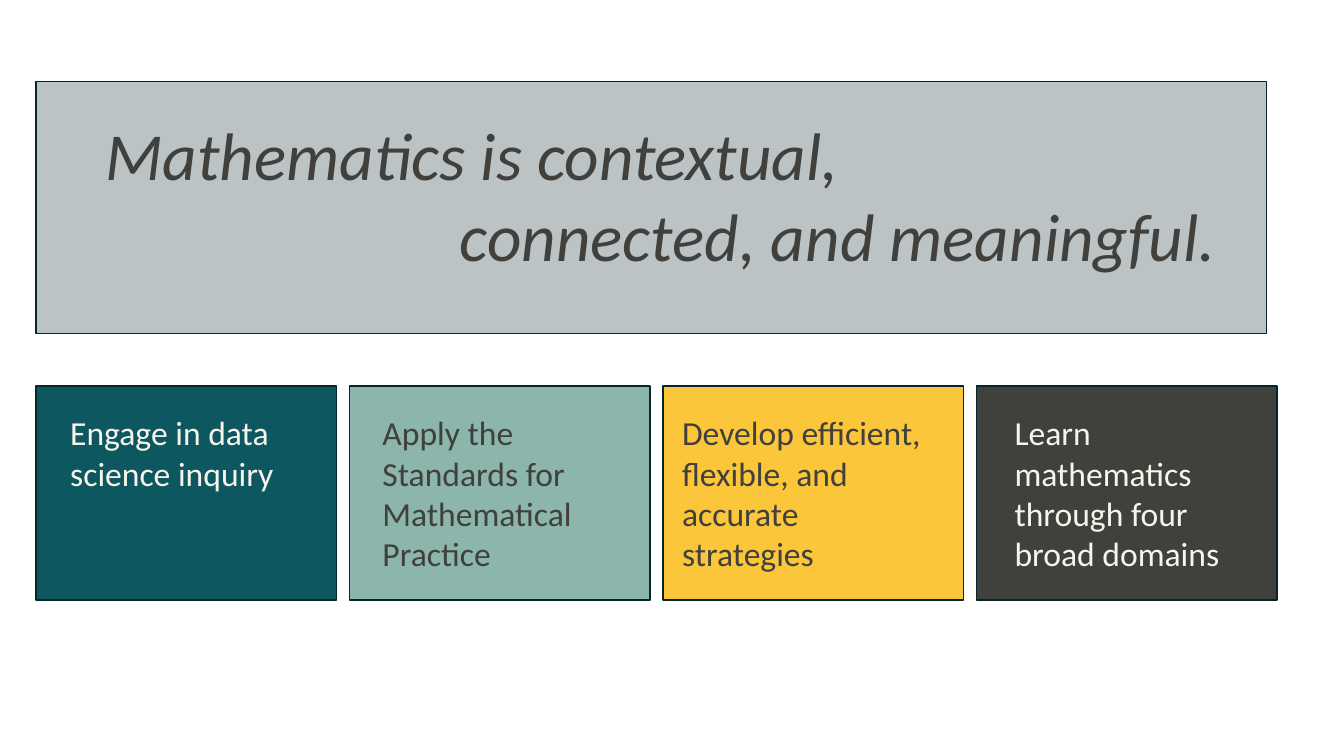
from dataclasses import dataclass

from pptx import Presentation
from pptx.dml.color import RGBColor
from pptx.enum.shapes import MSO_SHAPE
from pptx.enum.text import MSO_ANCHOR
from pptx.slide import Slide
from pptx.util import Cm, Pt

COLOURS = {
    "outline": "06262B",
    "grey": "BCC3C5",
    "teal": "0D5761",
    "sage": "8CB5AB",
    "yellow": "FBC639",
    "charcoal": "40403D",
    "cream": "F7F5EB",
}
FONT = "Calibri"
MARGIN_LEFT = 0.91
CARD_TOP, CARD_WIDTH, CARD_HEIGHT, CARD_PITCH = 9.73, 7.57, 5.39, 7.9
CARD_TEXT_TOP = 10.26


@dataclass
class Line:
    text: str
    indent: float = 0


@dataclass
class Card:
    message: str
    fill: str
    ink: str
    text_inset: float
    text_width: float
    text_height: float = 4.37


HEADLINE = [
    Line("Mathematics is contextual,"),
    Line("connected, and meaningful.", indent=8.93),
]
CARDS = [
    Card("Engage in data science inquiry", "teal", "cream", 0.61, 6.58, 2.34),
    Card("Apply the Standards for Mathematical Practice", "sage", "charcoal", 0.58, 7.06),
    Card("Develop efficient, flexible, and accurate strategies", "yellow", "charcoal", 0.23, 6.86),
    Card("Learn mathematics through four broad domains", "charcoal", "cream", 0.71, 6.58),
]


def colour(name: str) -> RGBColor:
    return RGBColor.from_string(COLOURS[name])


def add_panel(slide: Slide, left: float, top: float, width: float, height: float, fill: str) -> None:
    panel = slide.shapes.add_shape(MSO_SHAPE.RECTANGLE, Cm(left), Cm(top), Cm(width), Cm(height))
    panel.shadow.inherit = False
    panel.fill.solid()
    panel.fill.fore_color.rgb = colour(fill)
    panel.line.color.rgb = colour("outline")
    panel.line.width = Pt(1)


def add_text(slide: Slide, left: float, top: float, width: float, height: float,
             lines: list[Line], size: int, ink: str, italic: bool = False) -> None:
    frame = slide.shapes.add_textbox(Cm(left), Cm(top), Cm(width), Cm(height)).text_frame
    frame.word_wrap = True
    frame.vertical_anchor = MSO_ANCHOR.TOP
    for index, line in enumerate(lines):
        paragraph = frame.add_paragraph() if index else frame.paragraphs[0]
        if line.indent:
            paragraph._p.get_or_add_pPr().set("marL", str(Cm(line.indent)))
        run = paragraph.add_run()
        run.text = line.text
        run.font.name = FONT
        run.font.size = Pt(size)
        run.font.italic = italic
        run.font.color.rgb = colour(ink)


def main() -> None:
    presentation = Presentation()
    presentation.slide_width = Cm(33.87)
    presentation.slide_height = Cm(19.05)
    slide = presentation.slides.add_slide(presentation.slide_layouts[6])

    add_panel(slide, MARGIN_LEFT, 2.06, 31.01, 6.35, "grey")
    add_text(slide, 2.41, 2.74, 29.74, 4.37, HEADLINE, 48, "charcoal", italic=True)

    for column, card in enumerate(CARDS):
        left = MARGIN_LEFT + column * CARD_PITCH
        add_panel(slide, left, CARD_TOP, CARD_WIDTH, CARD_HEIGHT, card.fill)
        add_text(slide, left + card.text_inset, CARD_TEXT_TOP, card.text_width,
                 card.text_height, [Line(card.message)], 24, card.ink)

    presentation.save("out.pptx")


if __name__ == "__main__":
    main()
